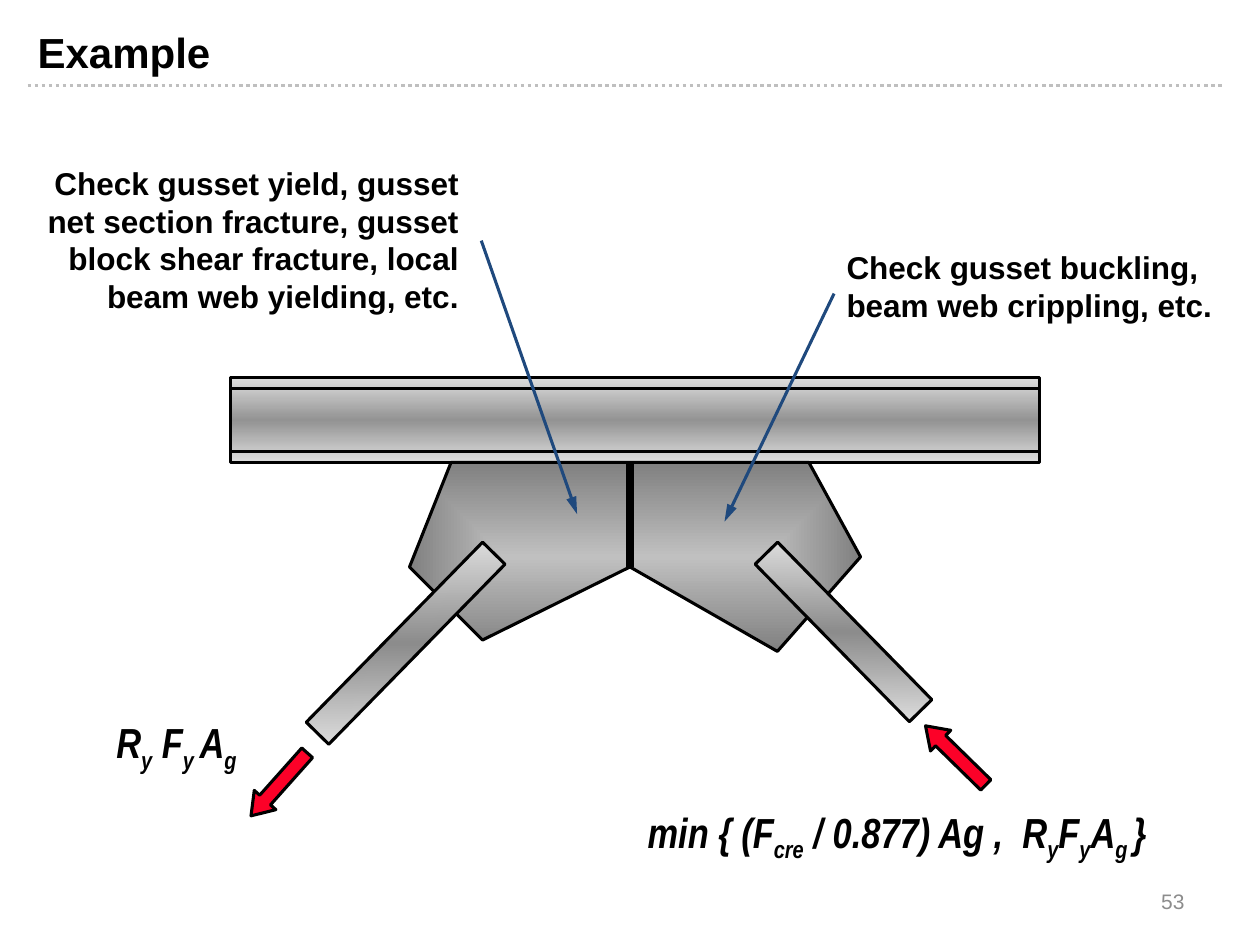
from dataclasses import dataclass

from pptx import Presentation, util as u
from pptx.dml.color import RGBColor
from pptx.enum import dml, shapes, text
from pptx.oxml.ns import qn
from lxml import etree

PX = 9144
KIND = shapes.MSO_SHAPE
ALIGN = text.PP_ALIGN


@dataclass(frozen=True)
class Theme:
    ink: str = "000000"
    rule: str = "BFBFBF"
    note: str = "1F497D"
    force: str = "FC0128"
    page: str = "8C8C8C"
    beam: tuple = ("DDDDDD", "939393", "DDDDDD")
    brace: tuple = ("DDDDDD", "8C8C8C", "DDDDDD")
    plate: tuple = ("C0C0C0", "808080")
    sans: str = "Arial"
    slim: str = "Arial Narrow"
    head: int = 24
    body: int = 18
    small: int = 12
    thin: float = 1.75
    thick: float = 4.5


def px(*vals):
    return [u.Emu(round(v * PX)) for v in vals]


def sub(parent, tag, **attrs):
    return etree.SubElement(parent, qn(tag), {k: str(v) for k, v in attrs.items()})


def write(frame, words, size=18, font="Arial", color="000000", bold=True,
          italic=False, align=ALIGN.LEFT):
    para = frame.paragraphs[0]
    para.alignment = align
    for i, part in enumerate(words.split("|")):
        run = para.add_run()
        run.text = part
        face = run.font
        face.size, face.name = u.Pt(size), font
        face.bold, face.italic = bold, italic
        face.color.rgb = RGBColor.from_string(color)
        if i % 2:
            face._element.set("baseline", "-25000")


class Board:
    def __init__(self, slide, theme):
        self.slide, self.theme = slide, theme

    def edge(self, item, color, width):
        item.line.color.rgb = RGBColor.from_string(color)
        item.line.width = u.Pt(width)

    def paint(self, item, fill, angle=None):
        item.shadow.inherit = False
        self.edge(item, self.theme.ink, self.theme.thin)
        if isinstance(fill, str):
            item.fill.solid()
            item.fill.fore_color.rgb = RGBColor.from_string(fill)
            return
        item.fill.gradient()
        grad = item._element.spPr.find(qn("a:gradFill"))
        grad.clear()
        grad.set("rotWithShape", "1")
        stops = sub(grad, "a:gsLst")
        for i, color in enumerate(fill):
            stop = sub(stops, "a:gs", pos=100000 * i // (len(fill) - 1))
            sub(stop, "a:srgbClr", val=color)
        if angle is None:
            way = sub(grad, "a:path", path="rect")
            sub(way, "a:fillToRect", l=50000, t=50000, r=50000, b=50000)
        else:
            sub(grad, "a:lin", ang=angle * 60000, scaled=0)

    def bar(self, box, fill, angle, turn=0, flip=False):
        item = self.slide.shapes.add_shape(KIND.RECTANGLE, *px(*box))
        self.paint(item, fill, angle)
        item.rotation = turn
        if flip:
            item._element.spPr.find(qn("a:xfrm")).set("flipH", "1")

    def arrow(self, box, turn):
        item = self.slide.shapes.add_shape(KIND.RIGHT_ARROW, *px(*box))
        self.paint(item, self.theme.force)
        item.rotation = turn
        item.adjustments[0], item.adjustments[1] = 0.5, 0.73

    def plate(self, points):
        pen = self.slide.shapes.build_freeform(*points[0], scale=PX)
        pen.add_line_segments(points[1:], close=True)
        self.paint(pen.convert_to_shape(), self.theme.plate)

    def line(self, start, end, color, width, dash=None, tip=False):
        item = self.slide.shapes.add_connector(
            shapes.MSO_CONNECTOR.STRAIGHT, *px(*start, *end))
        self.edge(item, color, width)
        if dash:
            item.line.dash_style = dash
        if tip:
            sub(item.line._get_or_add_ln(), "a:tailEnd",
                type="triangle", w="med", len="lg")
        sub(item._element.spPr, "a:effectLst")

    def label(self, box, words, anchor=text.MSO_ANCHOR.TOP, **style):
        frame = self.slide.shapes.add_textbox(*px(*box)).text_frame
        frame.word_wrap = True
        frame.vertical_anchor = anchor
        write(frame, words, **style)


def main():
    deck = Presentation()
    deck.slide_width, deck.slide_height = px(1000, 750)
    look = Theme()
    board = Board(deck.slides.add_slide(deck.slide_layouts[6]), look)

    board.line((22, 68), (972, 68), look.rule, 2, dash=dml.MSO_LINE.ROUND_DOT)

    left, right, top, base = 183, 825, 300, 367
    board.bar((left, top, right - left, base - top), look.beam, 90)
    for y in (base - 9, top + 8):
        board.line((left, y), (right, y), look.ink, look.thin)

    board.plate([(358, base), (325, 450), (383, 508), (500, 450),
                 (617, 517), (683, 442), (642, base)])
    board.bar((222, 498, 200, 25), look.brace, 315, turn=314.4)
    board.bar((582, 489, 175, 25), look.brace, 315, turn=45.6, flip=True)
    board.line((500, base), (500, 450), look.ink, look.thick)
    board.arrow((725, 588, 67, 23), 224.4)
    board.arrow((188, 611, 67, 23), 131.7)

    math = dict(size=look.head, font=look.slim, italic=True, align=ALIGN.CENTER)
    board.label((69, 564, 142, 50), "R|y| F|y |A|g", **math)
    board.label((662, 192, 325, 71),
                "Check gusset buckling, beam web crippling, etc.", size=look.body)
    board.label((16, 125, 358, 131),
                "Check gusset yield, gusset net section fracture, gusset block "
                "shear fracture, local beam web yielding, etc.",
                size=look.body, align=ALIGN.RIGHT)
    for start, end in (((662, 233), (575, 414)), ((382, 191), (458, 408))):
        board.line(start, end, look.note, look.thin, tip=True)
    board.label((458, 635, 508, 51),
                "min { (F|cre| / 0.877) Ag ,  R|y|F|y|A|g |}", **math)

    board.label((20, 16, 898, 44), "Example", size=look.head)
    board.label((717, 695, 233, 40), "53", anchor=text.MSO_ANCHOR.MIDDLE,
                size=look.small, color=look.page, bold=False, align=ALIGN.RIGHT)
    deck.save("out.pptx")


if __name__ == "__main__":
    main()
